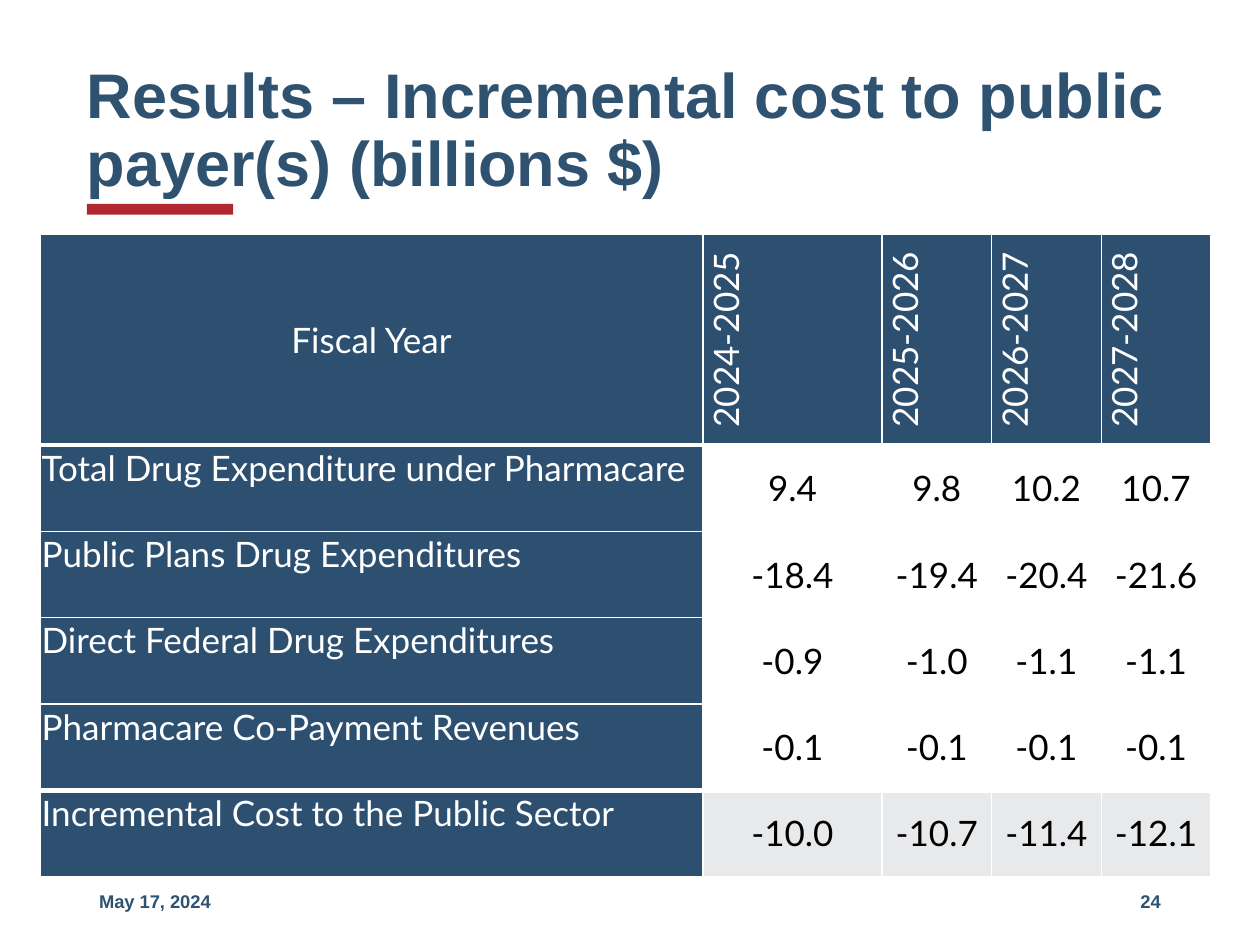
import pptx
import pptx.util
import pptx.dml.color
import pptx.enum.text
import pptx.enum.shapes
import pptx.oxml

Cm = pptx.util.Cm
Pt = pptx.util.Pt
Align = pptx.enum.text.PP_ALIGN
Anchor = pptx.enum.text.MSO_ANCHOR
NS = "http://schemas.openxmlformats.org/drawingml/2006/main"


def tint(color):
    return pptx.dml.color.RGBColor.from_string(color)


def style(para, size, name, color, bold, align):
    para.alignment = align
    for run in para.runs:
        run.font.size = Pt(size)
        run.font.name = name
        run.font.bold = bold
        run.font.color.rgb = tint(color)


deck = pptx.Presentation()
deck.slide_width = Cm(25.4)
deck.slide_height = Cm(19.05)
slide = deck.slides.add_slide(deck.slide_layouts[5])

title = slide.shapes.title
title.left, title.top, title.width, title.height = Cm(1.75), Cm(1.02), Cm(21.9), Cm(3.3)
frame = title.text_frame
frame.text = "Results – Incremental cost to public payer(s) (billions $)"
frame.margin_left = frame.margin_right = 0
frame.word_wrap = True
frame.auto_size = pptx.enum.text.MSO_AUTO_SIZE.NONE
frame.vertical_anchor = Anchor.MIDDLE
frame.paragraphs[0].line_spacing = 0.9
style(frame.paragraphs[0], 36, "Arial", "2F5271", True, Align.LEFT)

bar = slide.shapes.add_shape(
    pptx.enum.shapes.MSO_SHAPE.RECTANGLE, Cm(1.75), Cm(4.11), Cm(2.95), Cm(0.22))
bar.shadow.inherit = False
bar.fill.solid()
bar.fill.fore_color.rgb = tint("AF272F")
bar.line.fill.background()

data = [
    ["Fiscal Year", "2024-2025", "2025-2026", "2026-2027", "2027-2028"],
    ["Total Drug Expenditure under Pharmacare", "9.4", "9.8", "10.2", "10.7"],
    ["Public Plans Drug Expenditures", "-18.4", "-19.4", "-20.4", "-21.6"],
    ["Direct Federal Drug Expenditures", "-0.9", "-1.0", "-1.1", "-1.1"],
    ["Pharmacare Co-Payment Revenues", "-0.1", "-0.1", "-0.1", "-0.1"],
    ["Incremental Cost to the Public Sector", "-10.0", "-10.7", "-11.4", "-12.1"],
]
wide = [13.36, 3.61, 2.21, 2.21, 2.21]
high = [4.25] + [1.74] * 5
last = len(data) - 1
table = slide.shapes.add_table(
    len(data), len(wide), Cm(0.81), Cm(4.72), Cm(sum(wide)), Cm(sum(high))).table
table.horz_banding = False
for col, width in zip(table.columns, wide):
    col.width = Cm(width)
for row, height in zip(table.rows, high):
    row.height = Cm(height)

for r, line in enumerate(data):
    for c, text in enumerate(line):
        cell = table.cell(r, c)
        head = r == 0 or c == 0
        cell.text_frame.text = text
        cell.margin_left = cell.margin_right = Cm(0.03)
        cell.margin_top = cell.margin_bottom = Cm(0.03)
        cell.vertical_anchor = Anchor.TOP if (r == 0) != (c == 0) else Anchor.MIDDLE
        style(cell.text_frame.paragraphs[0], 20, "Lato", "FFFFFF" if head else "000000",
              False, Align.LEFT if c == 0 and r > 0 else Align.CENTER)
        props = cell._tc.get_or_add_tcPr()
        if r == 0 and c > 0:
            props.set("vert", "vert270")
        above = 3 if r in (1, last) else 1
        below = 3 if r in (0, last - 1) else 1
        for side, weight in zip("LRTB", (1, 1, above, below)):
            props.append(pptx.oxml.parse_xml(
                f'<a:ln{side} xmlns:a="{NS}" w="{Pt(weight)}"><a:solidFill>'
                f'<a:srgbClr val="FFFFFF"/></a:solidFill></a:ln{side}>'))
        cell.fill.solid()
        cell.fill.fore_color.rgb = tint(
            "2D5071" if head else "E8E9EB" if r == last else "FFFFFF")

for left, text, align in ((1.75, "May 17, 2024", Align.LEFT), (17.93, "24", Align.RIGHT)):
    note = slide.shapes.add_textbox(Cm(left), Cm(17.65), Cm(5.72), Cm(1.02)).text_frame
    note.word_wrap = True
    note.vertical_anchor = Anchor.MIDDLE
    note.text = text
    style(note.paragraphs[0], 10.5, "Arial", "2F5271", True, align)

deck.save("out.pptx")
